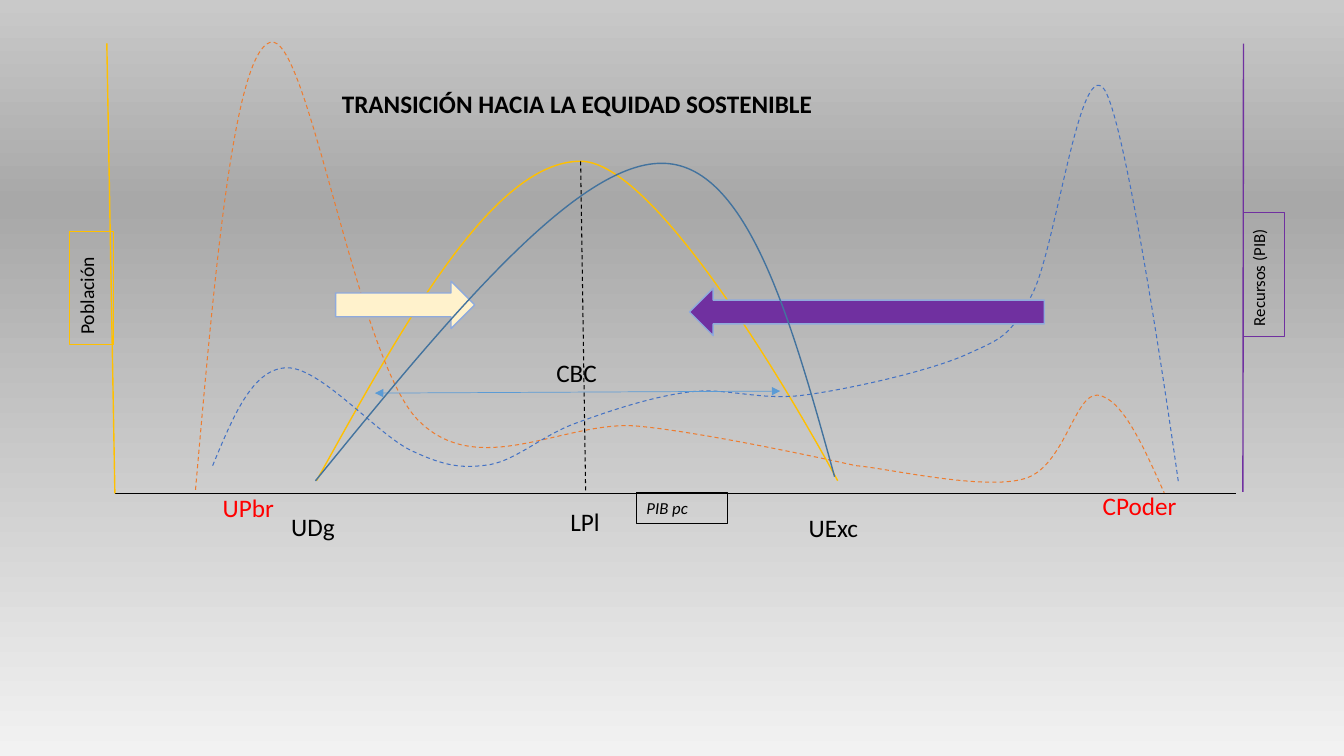
from lxml import etree
from pptx import Presentation
from pptx.dml.color import RGBColor
from pptx.enum.dml import MSO_LINE
from pptx.enum.shapes import MSO_CONNECTOR, MSO_SHAPE
from pptx.enum.text import MSO_ANCHOR, MSO_AUTO_SIZE, PP_ALIGN
from pptx.oxml.ns import qn
from pptx.util import Inches, Pt

DASH = MSO_LINE.DASH
STRAIGHT = MSO_CONNECTOR.STRAIGHT
ARROW, RECT = MSO_SHAPE.RIGHT_ARROW, MSO_SHAPE.RECTANGLE
FIT, NO_FIT = MSO_AUTO_SIZE.SHAPE_TO_FIT_TEXT, MSO_AUTO_SIZE.NONE
TOP, MIDDLE = MSO_ANCHOR.TOP, MSO_ANCHOR.MIDDLE
LEFT, CENTER = PP_ALIGN.LEFT, PP_ALIGN.CENTER

THEME = {
    "font": "Calibri",
    "label": 18, "axis": 14, "small": 12,
    "black": "000000", "red": "FF0000", "gold": "FFC000", "purple": "7030A0",
    "orange": "ED7D31", "blue": "4472C4", "steel": "43739E", "sky": "5B9BD5",
    "cream": "FFF2CC", "edge": "8FAADC",
    "background": [(0, "F2F2F2"), (73, "A8A8A8"), (100, "C9C9C9")],
}
COLS, ROWS = 133.33, 75

prs = Presentation()
prs.slide_width, prs.slide_height = Inches(13.33), Inches(7.5)
col, row = prs.slide_width / COLS, prs.slide_height / ROWS
s = prs.slides.add_slide(prs.slide_layouts[6])


def add_curve(color, width, dash, start, *beziers):
    fb = s.shapes.build_freeform(int(start[0] * col), int(start[1] * row))
    fb.add_line_segments([(int(b[4] * col), int(b[5] * row)) for b in beziers], close=False)
    sp = fb.convert_to_shape()
    for segment, b in zip(list(sp._element.iter(qn("a:lnTo"))), beziers):
        segment.tag = qn("a:cubicBezTo")
        segment.clear()
        for x, y in zip(b[::2], b[1::2]):
            etree.SubElement(segment, qn("a:pt"), x=str(int(x * col) - sp.left),
                             y=str(int(y * row) - sp.top))
    sp.shadow.inherit = False
    sp.fill.background()
    sp.line.color.rgb = RGBColor.from_string(THEME[color])
    sp.line.width = Pt(width)
    if dash:
        sp.line.dash_style = dash


def write(sp, text, size="label", color="black", bold=False, italic=False):
    tf = sp.text_frame
    tf.word_wrap = True
    tf.auto_size = FIT
    tf.vertical_anchor = TOP
    p = tf.paragraphs[0]
    p.alignment = LEFT
    r = p.add_run()
    r.text = text
    r.font.name = THEME["font"]
    r.font.size = Pt(THEME[size])
    r.font.bold, r.font.italic = bold, italic
    r.font.color.rgb = RGBColor.from_string(THEME[color])
    return tf


fill = s.background.fill
fill.gradient()
fill.gradient_angle = 90
stops = s.element.find(".//" + qn("a:gsLst"))
for stop in list(stops):
    stops.remove(stop)
for pos, color in THEME["background"]:
    stop = etree.SubElement(stops, qn("a:gs"), pos=str(pos * 1000))
    etree.SubElement(stop, qn("a:srgbClr"), val=color)

add_curve("gold", 1, None, (31.4, 47.7),
          (40.2, 31.8, 49, 16, 57.6, 16),
          (66.2, 16, 83.1, 47.7, 83.1, 47.7))
add_curve("orange", 0.75, DASH, (19.4, 48.6),
          (21.3, 27, 23.2, 5.4, 26.8, 4.2),
          (30.5, 3, 35.3, 35.2, 41.4, 41.6),
          (47.5, 47.9, 56.2, 41.5, 63.5, 42.3),
          (70.7, 43, 84.9, 46.2, 84.9, 46.2),
          (87.7, 46.4, 97.6, 48.7, 101.6, 47.5),
          (105.6, 46.4, 106.6, 39, 108.9, 39.2),
          (111.3, 39.5, 113.4, 44.2, 115.5, 48.9))
add_curve("blue", 0.75, DASH, (21.1, 46.2),
          (23.1, 41.4, 25, 36.7, 28.3, 36.5),
          (31.6, 36.2, 37.4, 43.1, 40.8, 44.7),
          (44.2, 46.3, 45.9, 46.5, 48.6, 46.1),
          (51.3, 45.6, 53.8, 43.2, 57.1, 42),
          (60.4, 40.8, 64.5, 39.4, 68.3, 38.9),
          (72.1, 38.4, 75.3, 39.8, 79.8, 39.2),
          (84.3, 38.6, 91.8, 36.9, 95.6, 35.3),
          (99.3, 33.6, 100.1, 33.6, 102.4, 29.2),
          (104.7, 24.8, 107.1, 5.7, 109.5, 8.8),
          (111.9, 11.9, 116.9, 47.8, 116.9, 47.8))

for x1, y1, x2, y2, color, width, dash, heads in [
    (57.6, 16, 58.1, 48.9, "black", 0.75, DASH, ()),
    (11.4, 48.94, 122.6, 48.94, "black", 1, None, ()),
    (11.4, 48.94, 10.6, 4.3, "gold", 1, None, ()),
    (123.3, 48.8, 123.36, 4.34, "purple", 1, None, ()),
    (37.2, 39, 77.4, 38.8, "sky", 0.5, None, ("a:headEnd", "a:tailEnd")),
]:
    cx = s.shapes.add_connector(STRAIGHT, int(x1 * col), int(y1 * row),
                                int(x2 * col), int(y2 * row))
    cx.line.color.rgb = RGBColor.from_string(THEME[color])
    cx.line.width = Pt(width)
    if dash:
        cx.line.dash_style = dash
    for head in heads:
        etree.SubElement(cx.line._get_or_add_ln(), qn(head), type="triangle")
    etree.SubElement(cx._element.spPr, qn("a:effectLst"))

for text, x, y, w, color in [
    ("UDg", 27.9, 50.2, 7.8, "black"),
    ("UExc", 79.24, 50.3, 9.3, "black"),
    ("LPl", 55.6, 49.7, 7.8, "black"),
    ("CBC", 54.2, 35, 7.8, "black"),
    ("UPbr", 21.1, 48.34, 7.8, "red"),
    ("CPoder", 108.4, 48.14, 11.8, "red"),
]:
    sp = s.shapes.add_textbox(int(x * col), int(y * row), int(w * col), int(4 * row))
    write(sp, text, color=color)

for x, y, w, color, angle in [
    (33.3, 27.9, 13.8, "cream", 0),
    (68.4, 28.6, 35.2, "purple", 180),
]:
    sp = s.shapes.add_shape(ARROW, int(x * col), int(y * row), int(w * col), int(4.7 * row))
    sp.rotation = angle
    sp.shadow.inherit = False
    sp.fill.solid()
    sp.fill.fore_color.rgb = RGBColor.from_string(THEME[color])
    sp.line.color.rgb = RGBColor.from_string(THEME["edge"])
    sp.line.width = Pt(1)

sp = s.shapes.add_textbox(int(20.9 * col), int(8.74 * row), int(72.7 * col), int(3.4 * row))
tf = write(sp, "TRANSICIÓN HACIA LA EQUIDAD SOSTENIBLE", bold=True)
tf.auto_size = NO_FIT
tf.vertical_anchor = MIDDLE
tf.paragraphs[0].alignment = CENTER
tf.paragraphs[0].line_spacing = 0.9

for text, x, y, w, h, size, color, width, upright in [
    ("Población", 6.9, 23, 4.4, 11.2, "axis", "gold", 0.75, False),
    ("Recursos (PIB)", 123.34, 21.04, 4.04, 12.3, "small", "purple", 0.25, False),
    ("PIB pc", 63.14, 48.84, 9, 3.03, "small", "black", 0.25, True),
]:
    sp = s.shapes.add_shape(RECT, int(x * col), int(y * row), int(w * col), int(h * row))
    sp.shadow.inherit = False
    sp.fill.background()
    sp.line.color.rgb = RGBColor.from_string(THEME[color])
    sp.line.width = Pt(width)
    tf = write(sp, text, size, italic=upright)
    if not upright:
        tf._txBody.bodyPr.set("vert", "vert270")

add_curve("steel", 1, None, (31.3, 47.7),
          (44.1, 32, 57, 16.2, 65.6, 16.2),
          (74.1, 16.1, 78.5, 31.7, 82.8, 47.3))

prs.save("out.pptx")
